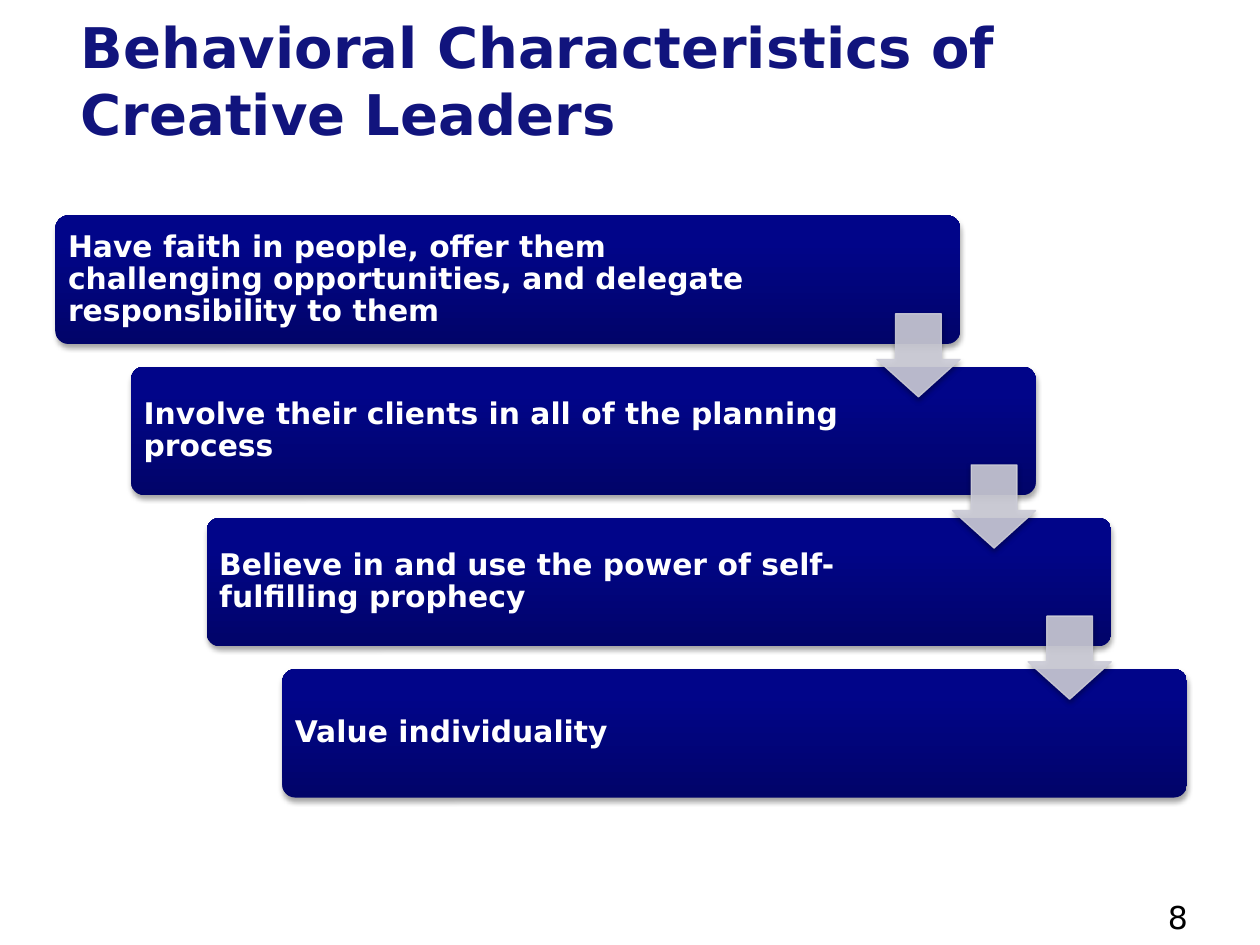
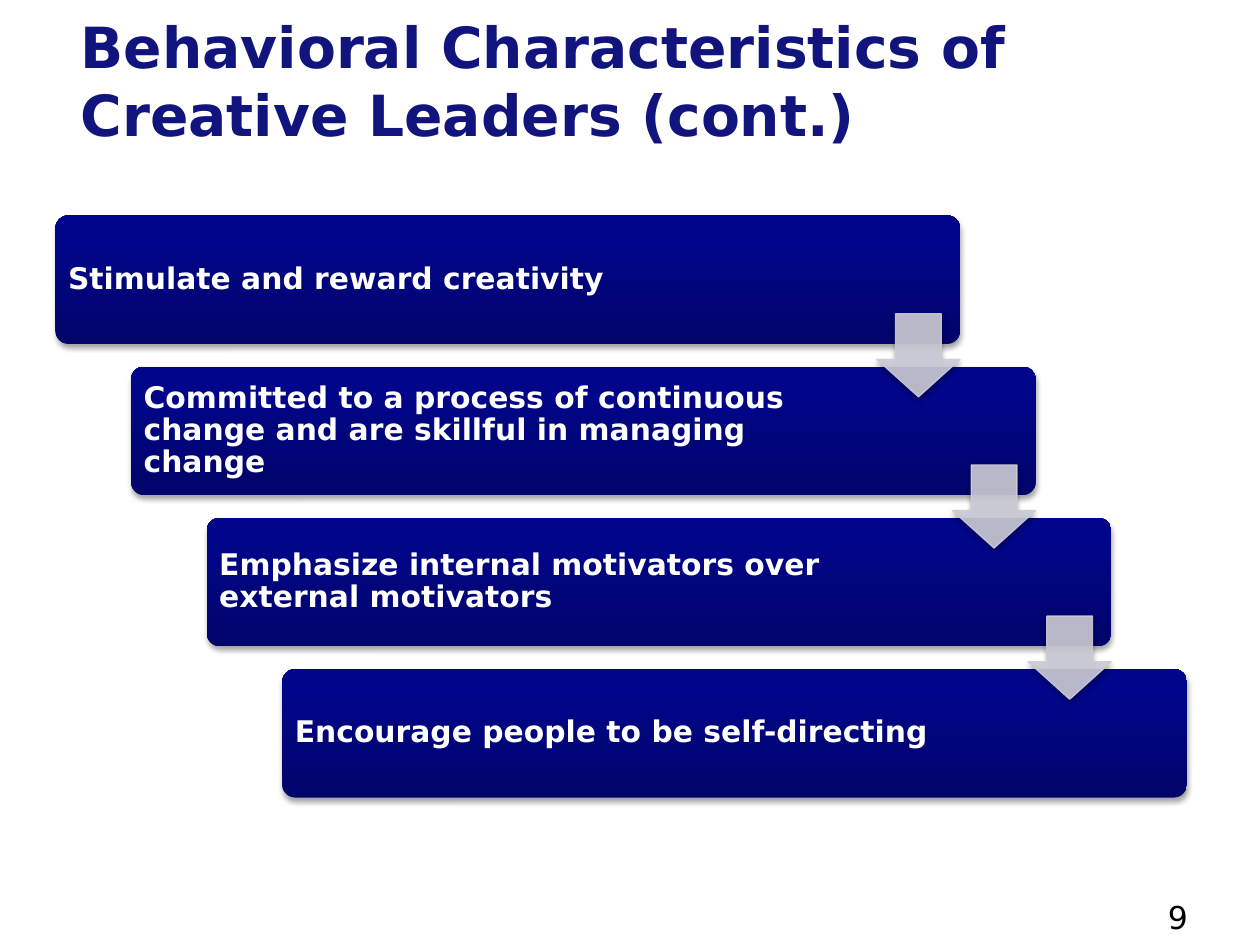
from dataclasses import dataclass

from lxml import etree
from pptx import Presentation, util as u
from pptx.dml.color import RGBColor
from pptx.enum import shapes, text
from pptx.oxml import ns


@dataclass(frozen=True)
class Theme:
    font: str = "DejaVu Sans"
    title: str = "11147D"
    step_text: str = "FFFFFF"
    number: str = "000000"
    arrow: str = "CCCCD7"
    shadow: str = "000000"
    gradient: tuple = ((0, "010469"), (80, "010589"), (100, "00048A"))
    step_size: float = 17
    number_size: float = 18


@dataclass(frozen=True)
class Cascade:
    left: float = 0.44
    top: float = 1.71
    width: float = 7.18
    height: float = 1.02
    shift: float = 0.6
    drop: float = 1.2
    arrow_left: float = 6.96
    arrow_top: float = 2.49
    arrow_size: float = 0.66


@dataclass(frozen=True)
class StepSlide:
    title: str
    title_size: float
    number: int
    steps: tuple


THEME = Theme()
CASCADE = Cascade()
SLIDES = (
    StepSlide(
        "Behavioral Characteristics of Creative Leaders", 32, 8,
        ("Have faith in people, offer them challenging opportunities, "
         "and delegate responsibility to them",
         "Involve their clients in all of the planning process",
         "Believe in and use the power of self-fulfilling prophecy",
         "Value individuality")),
    StepSlide(
        "Behavioral Characteristics of Creative Leaders (cont.)", 32.4, 9,
        ("Stimulate and reward creativity",
         "Committed to a process of continuous change and are skillful "
         "in managing change",
         "Emphasize internal motivators over external motivators",
         "Encourage people to be self-directing")),
)


def add_color(parent, color: str, alpha: int = 100) -> None:
    clr = etree.SubElement(parent, ns.qn("a:srgbClr"), val=color)
    if alpha < 100:
        etree.SubElement(clr, ns.qn("a:alpha"), val=str(alpha * 1000))


def add_shadow(sp) -> None:
    sp.shadow.inherit = False
    effects = sp._element.spPr.find(ns.qn("a:effectLst"))
    shadow = etree.SubElement(
        effects, ns.qn("a:outerShdw"), blurRad=str(u.Pt(3.1)),
        dist=str(u.Pt(1.8)), dir="5400000", rotWithShape="0")
    add_color(shadow, THEME.shadow, 35)


def style(p, size: float, color: str, bold: bool) -> None:
    p.alignment = text.PP_ALIGN.LEFT
    p.font.name = THEME.font
    p.font.size = u.Pt(size)
    p.font.bold = bold
    p.font.color.rgb = RGBColor.from_string(color)


def set_title(s, title: str, size: float) -> None:
    sp = s.shapes.title
    sp.left, sp.top = u.Inches(0.33), u.Inches(0.17)
    sp.width, sp.height = u.Inches(9.5), u.Inches(0.92)
    tf = sp.text_frame
    tf.text = title
    tf.word_wrap = True
    tf.auto_size = text.MSO_AUTO_SIZE.NONE
    tf.vertical_anchor = text.MSO_ANCHOR.MIDDLE
    p = tf.paragraphs[0]
    pPr = p._p.get_or_add_pPr()
    pPr.set("marL", str(u.Inches(0.21)))
    pPr.set("indent", "0")
    p.space_before = u.Pt(0)
    style(p, size, THEME.title, True)


def add_step(s, index: int, label: str) -> None:
    c = CASCADE
    sp = s.shapes.add_shape(
        shapes.MSO_SHAPE.ROUNDED_RECTANGLE,
        u.Inches(c.left + index * c.shift), u.Inches(c.top + index * c.drop),
        u.Inches(c.width), u.Inches(c.height))
    sp.adjustments[0] = 0.1
    sp.fill.gradient()
    sp.fill.gradient_angle = 90
    stops = sp._element.spPr.find(".//" + ns.qn("a:gsLst"))
    for old in list(stops):
        stops.remove(old)
    for pos, color in THEME.gradient:
        add_color(etree.SubElement(stops, ns.qn("a:gs"), pos=str(pos * 1000)), color)
    sp.line.fill.background()
    add_shadow(sp)
    tf = sp.text_frame
    tf.word_wrap = True
    tf.vertical_anchor = text.MSO_ANCHOR.MIDDLE
    tf.margin_left = tf.margin_top = tf.margin_bottom = u.Inches(0.07)
    tf.margin_right = u.Inches(1.33)
    tf.text = label
    p = tf.paragraphs[0]
    p.line_spacing = 0.9
    style(p, THEME.step_size, THEME.step_text, True)


def add_arrow(s, index: int) -> None:
    c = CASCADE
    size = u.Inches(c.arrow_size)
    sp = s.shapes.add_shape(
        shapes.MSO_SHAPE.DOWN_ARROW,
        u.Inches(c.arrow_left + index * c.shift),
        u.Inches(c.arrow_top + index * c.drop), size, size)
    sp.adjustments[0], sp.adjustments[1] = 0.55, 0.45
    sp.line.width = u.Pt(0.75)
    for fill in (sp.fill, sp.line.fill):
        fill.solid()
        fill.fore_color.rgb = RGBColor.from_string(THEME.arrow)
    for clr in sp._element.spPr.iter(ns.qn("a:srgbClr")):
        etree.SubElement(clr, ns.qn("a:alpha"), val="90000")
    add_shadow(sp)


def add_number(s, number: int) -> None:
    sp = s.shapes.add_textbox(
        u.Inches(9.17), u.Inches(7.08), u.Inches(0.83), u.Inches(0.27))
    tf = sp.text_frame
    tf.word_wrap = True
    tf.text = str(number)
    style(tf.paragraphs[0], THEME.number_size, THEME.number, False)


def build_slide(prs, content: StepSlide) -> None:
    s = prs.slides.add_slide(prs.slide_layouts[5])
    set_title(s, content.title, content.title_size)
    for index, label in enumerate(content.steps):
        add_step(s, index, label)
    for index in range(len(content.steps) - 1):
        add_arrow(s, index)
    add_number(s, content.number)


def main() -> None:
    prs = Presentation()
    prs.slide_width, prs.slide_height = u.Inches(10), u.Inches(7.5)
    for content in SLIDES:
        build_slide(prs, content)
    prs.save("out.pptx")


if __name__ == "__main__":
    main()
